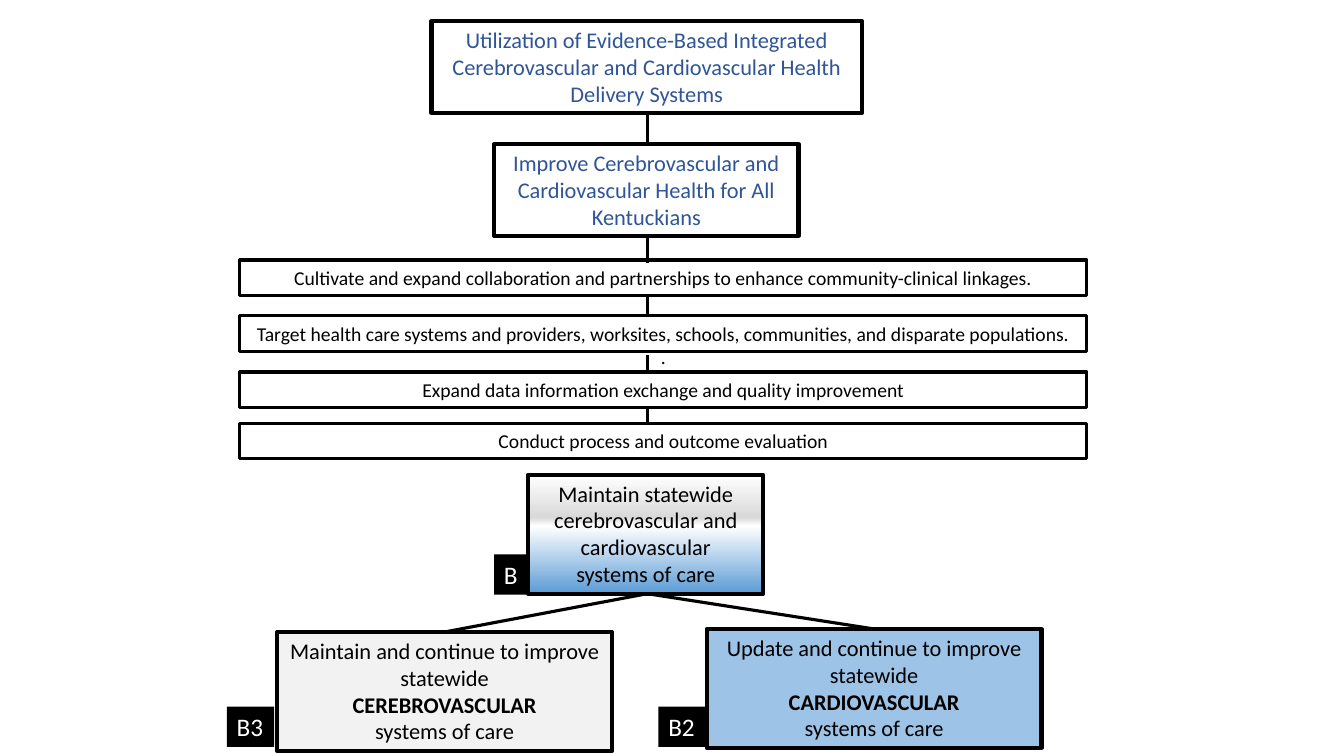
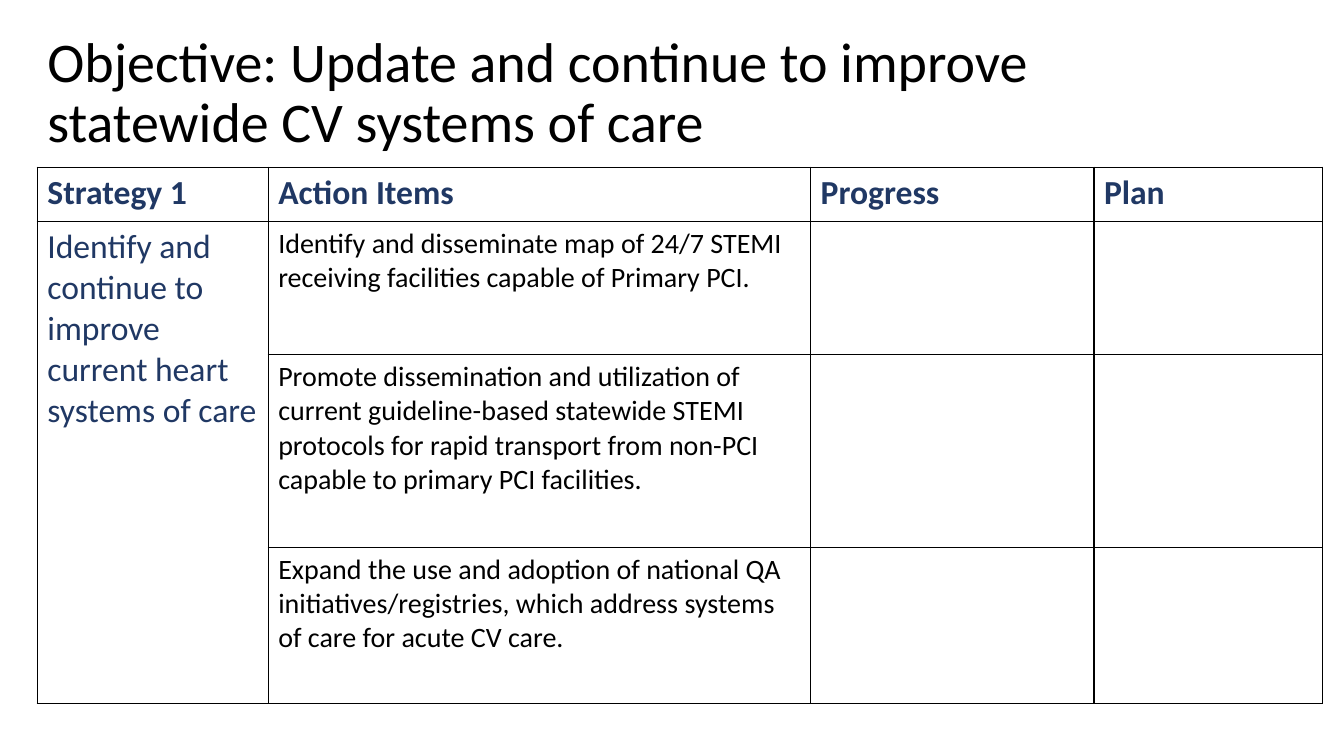
from lxml import etree
from pptx import Presentation
from pptx.dml.color import RGBColor
from pptx.enum.shapes import MSO_CONNECTOR, MSO_SHAPE
from pptx.enum.text import MSO_ANCHOR, MSO_AUTO_SIZE, PP_ALIGN
from pptx.oxml import parse_xml
from pptx.oxml.ns import nsdecls, qn
from pptx.util import Inches, Pt

FONT = "Calibri"
BLACK = RGBColor(0x00, 0x00, 0x00)
WHITE = RGBColor(0xFF, 0xFF, 0xFF)
GOAL_BLUE = RGBColor(0x2F, 0x55, 0x97)
NAVY = RGBColor(0x20, 0x38, 0x64)
LIGHT_GRAY = RGBColor(0xF2, 0xF2, 0xF2)
MID_GRAY = RGBColor(0xD9, 0xD9, 0xD9)
LIGHT_BLUE = RGBColor(0x9D, 0xC3, 0xE6)
SKY_BLUE = RGBColor(0x5B, 0x9B, 0xD5)
CARE_GRADIENT = [(0, WHITE), (36, MID_GRAY), (43, WHITE), (100, SKY_BLUE)]

CENTER_X = 6.42
BAR_LEFT, BAR_WIDTH, BAR_HEIGHT = 2.38, 8.4, 0.35
TAG_HEIGHT = 0.4


def write_text(frame, *lines, size, color=BLACK, bold=False, align=PP_ALIGN.LEFT,
               anchor=MSO_ANCHOR.TOP, bold_line=None, spacing=None):
    """Fill a text frame with one paragraph per line."""
    frame.vertical_anchor = anchor
    for index, line in enumerate(lines):
        paragraph = frame.paragraphs[0] if index == 0 else frame.add_paragraph()
        paragraph.alignment = align
        if spacing:
            paragraph.line_spacing = spacing
        run = paragraph.add_run()
        run.text = line
        run.font.name = FONT
        run.font.size = Pt(size)
        run.font.bold = bold or index == bold_line
        run.font.color.rgb = color


def fill_gradient(shape, stops):
    """Fill a shape from top to bottom with (percent, colour) stops."""
    shape.fill.gradient()
    shape.fill.gradient_angle = 270
    stop_list = shape.fill._fill._gradFill.find(qn("a:gsLst"))
    for stop in list(stop_list):
        stop_list.remove(stop)
    for percent, color in stops:
        stop_list.append(parse_xml(
            f'<a:gs {nsdecls("a")} pos="{percent * 1000}">'
            f'<a:srgbClr val="{color}"/></a:gs>'))


def add_box(slide, left, top, width, height, *lines, fill=None, line_width=3, **text_format):
    shape = slide.shapes.add_shape(
        MSO_SHAPE.RECTANGLE, Inches(left), Inches(top), Inches(width), Inches(height))
    shape.shadow.inherit = False
    if fill is None:
        shape.fill.background()
    elif isinstance(fill, list):
        fill_gradient(shape, fill)
    else:
        shape.fill.solid()
        shape.fill.fore_color.rgb = fill
    if line_width:
        shape.line.color.rgb = BLACK
        shape.line.width = Pt(line_width)
    else:
        shape.line.fill.background()
    shape.text_frame.word_wrap = True
    write_text(shape.text_frame, *lines, **{"align": PP_ALIGN.CENTER, "size": 16, **text_format})
    return shape


def add_bar(slide, top, *lines, anchor=MSO_ANCHOR.MIDDLE):
    return add_box(slide, BAR_LEFT, top, BAR_WIDTH, BAR_HEIGHT, *lines,
                   fill=WHITE, line_width=2.25, size=14, anchor=anchor)


def add_tag(slide, left, top, width, label):
    tag = add_box(slide, left, top, width, TAG_HEIGHT, label, fill=BLACK, line_width=0,
                  size=18, color=WHITE, align=PP_ALIGN.LEFT)
    tag.text_frame.word_wrap = False


def add_line(slide, x1, y1, x2, y2):
    connector = slide.shapes.add_connector(
        MSO_CONNECTOR.STRAIGHT, Inches(x1), Inches(y1), Inches(x2), Inches(y2))
    connector.line.color.rgb = BLACK
    connector.line.width = Pt(2.25)
    etree.SubElement(connector._element.spPr, qn("a:effectLst"))


def format_cell(cell):
    """Give a cell a white fill and thin black borders."""
    properties = cell._tc.get_or_add_tcPr()
    for side in ("lnL", "lnR", "lnT", "lnB"):
        properties.append(parse_xml(
            f'<a:{side} {nsdecls("a")} w="{Pt(1)}"><a:solidFill>'
            f'<a:srgbClr val="{BLACK}"/></a:solidFill></a:{side}>'))
    cell.fill.solid()
    cell.fill.fore_color.rgb = WHITE


def add_grid(slide, left, top, column_widths, row_heights):
    table = slide.shapes.add_table(
        len(row_heights), len(column_widths), Inches(left), Inches(top),
        Inches(sum(column_widths)), Inches(sum(row_heights))).table
    table.first_row = table.horz_banding = False
    for column, width in zip(table.columns, column_widths):
        column.width = Inches(width)
    for row, height in zip(table.rows, row_heights):
        row.height = Inches(height)
    for cell in table.iter_cells():
        format_cell(cell)
    return table


def build_framework_slide(presentation):
    slide = presentation.slides.add_slide(presentation.slide_layouts[6])

    add_bar(slide, 2.58, "Cultivate and expand collaboration and partnerships "
                         "to enhance community-clinical linkages.")
    target_bar = add_bar(slide, 3.13, "Target health care systems and providers, worksites, schools, "
                                      "communities, and disparate populations.", ".",
                         anchor=MSO_ANCHOR.TOP)
    target_bar.height = Inches(0.36)
    target_bar.text_frame.margin_top = Inches(0.06)
    add_bar(slide, 3.69, "Expand data information exchange and quality improvement")
    add_bar(slide, 4.2, "Conduct process and outcome evaluation")

    add_box(slide, 4.28, 0.21, 4.27, 0.91,
            "Utilization of Evidence-Based Integrated Cerebrovascular "
            "and Cardiovascular Health Delivery Systems", color=GOAL_BLUE)
    add_box(slide, 4.9, 1.43, 3.02, 0.91,
            "Improve Cerebrovascular and Cardiovascular Health for All Kentuckians",
            color=GOAL_BLUE)
    add_box(slide, 5.24, 4.71, 2.33, 1.18,
            "Maintain statewide cerebrovascular and cardiovascular", "systems of care",
            fill=CARE_GRADIENT)
    branches = [
        (2.75, 6.27, "Maintain", "CEREBROVASCULAR", LIGHT_GRAY),
        (7.01, 6.24, "Update", "CARDIOVASCULAR", LIGHT_BLUE),
    ]
    for left, top, verb, system, fill in branches:
        add_box(slide, left, top, 3.32, 1.18, f"{verb} and continue to improve statewide",
                system, "systems of care", fill=fill, bold_line=1)
        add_line(slide, CENTER_X, 5.89, left + 3.32 / 2, top)

    add_tag(slide, 4.9, 5.5, 0.32, "B")
    add_tag(slide, 2.25, 7.01, 0.47, "B3")
    add_tag(slide, 6.53, 7.01, 0.47, "B2")

    for start, end in [(1.12, 1.43), (2.34, 2.61), (2.93, 3.13), (3.52, 3.69), (4.04, 4.2)]:
        add_line(slide, CENTER_X, start, CENTER_X, end)


def build_objective_slide(presentation):
    slide = presentation.slides.add_slide(presentation.slide_layouts[5])
    title = slide.shapes.title
    title.left, title.top = Inches(0.37), Inches(0.21)
    title.width, title.height = Inches(11.5), Inches(1.45)
    title.text_frame.word_wrap = True
    title.text_frame.auto_size = MSO_AUTO_SIZE.NONE
    write_text(title.text_frame,
               "Objective: Update and continue to improve statewide CV systems of care",
               size=40, anchor=MSO_ANCHOR.MIDDLE, spacing=0.9)

    table = add_grid(slide, 0.37, 1.66, [2.29, 5.38, 2.81, 2.27], [0.54, 1.32, 1.91, 1.55])
    for column, heading in enumerate(["Strategy 1", "Action Items", "Progress", "Plan"]):
        write_text(table.cell(0, column).text_frame, heading, size=24, color=NAVY, bold=True)

    strategy = table.cell(1, 0)
    strategy.merge(table.cell(3, 0))
    write_text(strategy.text_frame,
               "Identify and continue to improve current heart systems of care",
               size=24, color=NAVY)

    actions = [
        "Identify and disseminate map of 24/7 STEMI receiving facilities capable of Primary PCI.",
        "Promote dissemination and utilization of current guideline-based statewide STEMI "
        "protocols for rapid transport from non-PCI capable to primary PCI facilities.",
        "Expand the use and adoption of national QA initiatives/registries, "
        "which address systems of care for acute CV care.",
    ]
    for row, action in enumerate(actions, start=1):
        write_text(table.cell(row, 1).text_frame, action, size=20)


def main():
    presentation = Presentation()
    presentation.slide_width = Inches(13.33)
    presentation.slide_height = Inches(7.5)
    build_framework_slide(presentation)
    build_objective_slide(presentation)
    presentation.save("out.pptx")


if __name__ == "__main__":
    main()
